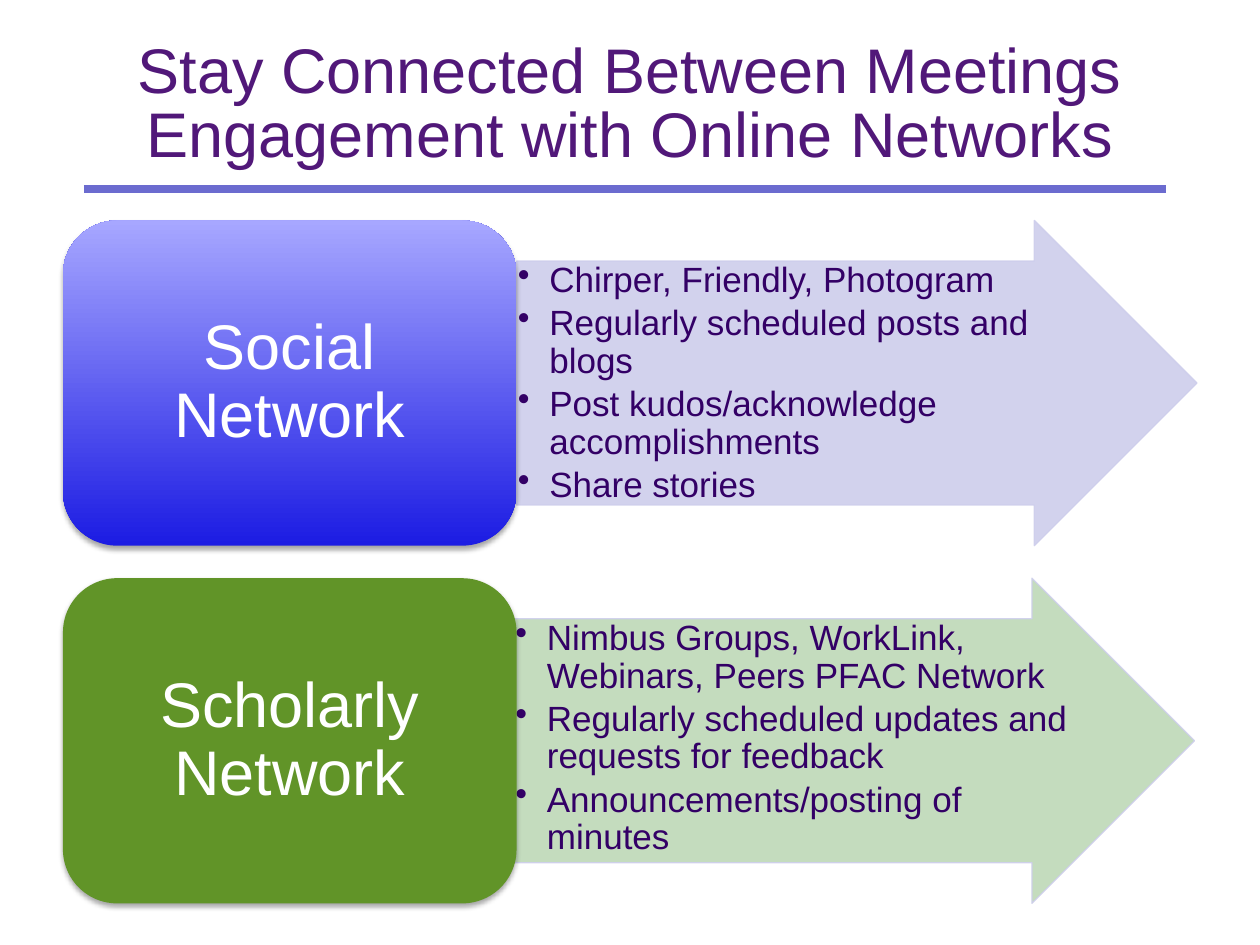
from lxml import etree
from pptx import Presentation
from pptx.dml.color import RGBColor
from pptx.enum.shapes import MSO_CONNECTOR, MSO_SHAPE
from pptx.enum.text import MSO_ANCHOR, PP_ALIGN
from pptx.oxml import parse_xml
from pptx.oxml.ns import nsdecls, qn
from pptx.util import Pt

# Content
TITLE = "Stay Connected Between Meetings Engagement with Online Networks"
NETWORKS = [
    {"label": "Social Network", "card": ("1C1CE3", "A7A7FF"),
     "arrow": "CECEEC", "arrow_left": 295.2,
     "points": ["Chirper, Friendly, Photogram",
                "Regularly scheduled posts and blogs",
                "Post kudos/acknowledge accomplishments",
                "Share stories"]},
    {"label": "Scholarly Network", "card": ("619428",),
     "arrow": "BED9B8", "arrow_left": 293.8,
     "points": ["Nimbus Groups, WorkLink, Webinars, Peers PFAC Network",
                "Regularly scheduled updates and requests for feedback",
                "Announcements/posting of minutes"]},
]

# Layout, in points
FONT = "Arial"
FIRST_TOP, ROW_STEP, ROW_H = 126, 204.4, 185.8
CARD_LEFT, CARD_W, CARD_PAD = 36, 259.2, 9.07
ARROW_W, POINTS_W = 388.8, 319
SHAFT = 0.75
POINTS_INSET = 0.72


def rgb(value):
    return RGBColor.from_string(value)


def box(at):
    return [Pt(length) for length in at]


def add_text(slide, at, paragraphs, size, color, spacing, insets,
             anchor=MSO_ANCHOR.TOP, align=PP_ALIGN.CENTER, bullets=False):
    frame = slide.shapes.add_textbox(*box(at)).text_frame
    frame.word_wrap = True
    frame.vertical_anchor = anchor
    (frame.margin_left, frame.margin_top,
     frame.margin_right, frame.margin_bottom) = box(insets)
    for i, text in enumerate(paragraphs):
        para = frame.paragraphs[0] if i == 0 else frame.add_paragraph()
        para.text = text
        para.alignment = align
        para.line_spacing = spacing
        if bullets:
            para.level = 1
            para.space_after = Pt(3)
            props = para._p.get_or_add_pPr()
            props.set("marL", str(Pt(18)))
            props.set("indent", str(-Pt(18)))
            etree.SubElement(props, qn("a:buChar")).set("char", "•")
        para.font.name = FONT
        para.font.size = Pt(size)
        para.font.color.rgb = rgb(color)


def make_translucent(shape, percent):
    for color in shape._element.spPr.iter(qn("a:srgbClr")):
        etree.SubElement(color, qn("a:alpha")).set("val", str(percent * 1000))


def add_arrow(slide, at, color):
    arrow = slide.shapes.add_shape(MSO_SHAPE.RIGHT_ARROW, *box(at))
    arrow.adjustments[0], arrow.adjustments[1] = SHAFT, 0.5
    arrow.shadow.inherit = False
    arrow.fill.solid()
    arrow.fill.fore_color.rgb = rgb(color)
    arrow.line.color.rgb = rgb("CECEEC")
    arrow.line.width = Pt(0.75)
    make_translucent(arrow, 90)


def add_card(slide, at, colors):
    card = slide.shapes.add_shape(MSO_SHAPE.ROUNDED_RECTANGLE, *box(at))
    if len(colors) > 1:
        card.fill.gradient()
        card.fill.gradient_angle = 90
        for stop, color in zip(card.fill.gradient_stops, colors):
            stop.color.rgb = rgb(color)
    else:
        card.fill.solid()
        card.fill.fore_color.rgb = rgb(colors[0])
    card.line.fill.background()
    card.shadow.inherit = False
    effects = card._element.spPr.find(qn("a:effectLst"))
    effects.append(parse_xml(
        f'<a:outerShdw {nsdecls("a")} blurRad="{Pt(3.1)}" dist="{Pt(1.8)}" '
        'dir="5400000" rotWithShape="0"><a:srgbClr val="000000">'
        '<a:alpha val="35000"/></a:srgbClr></a:outerShdw>'))


def main():
    prs = Presentation()
    prs.slide_width, prs.slide_height = Pt(720), Pt(540)
    slide = prs.slides.add_slide(prs.slide_layouts[6])

    # Title
    add_text(slide, (36, 18, 648, 90), [TITLE], 36, "511879", 0.85,
             (7.2, 6, 7.2, 3.6))

    # One row per network: arrow with points, then card with label
    for i, network in enumerate(NETWORKS):
        top = FIRST_TOP + i * ROW_STEP
        left = network["arrow_left"]
        add_arrow(slide, (left, top, ARROW_W, ROW_H), network["arrow"])
        add_text(slide,
                 (left, top + ROW_H * (1 - SHAFT) / 2, POINTS_W, ROW_H * SHAFT),
                 network["points"], 20, "330066", 0.9, (POINTS_INSET,) * 4,
                 align=PP_ALIGN.LEFT, bullets=True)
        add_card(slide, (CARD_LEFT, top, CARD_W, ROW_H), network["card"])
        add_text(slide,
                 (CARD_LEFT + CARD_PAD, top + CARD_PAD,
                  CARD_W - 2 * CARD_PAD, ROW_H - 2 * CARD_PAD),
                 [network["label"]], 36, "FFFFFF", 0.9, (10.8, 5.4, 10.8, 5.4),
                 anchor=MSO_ANCHOR.MIDDLE)

    # Rule under the title
    rule = slide.shapes.add_connector(
        MSO_CONNECTOR.STRAIGHT, *box((48, 108, 666, 108)))
    rule.line.color.rgb = rgb("6B6BCF")
    rule.line.width = Pt(4.5)
    etree.SubElement(rule._element.spPr, qn("a:effectLst"))

    prs.save("out.pptx")


if __name__ == "__main__":
    main()
